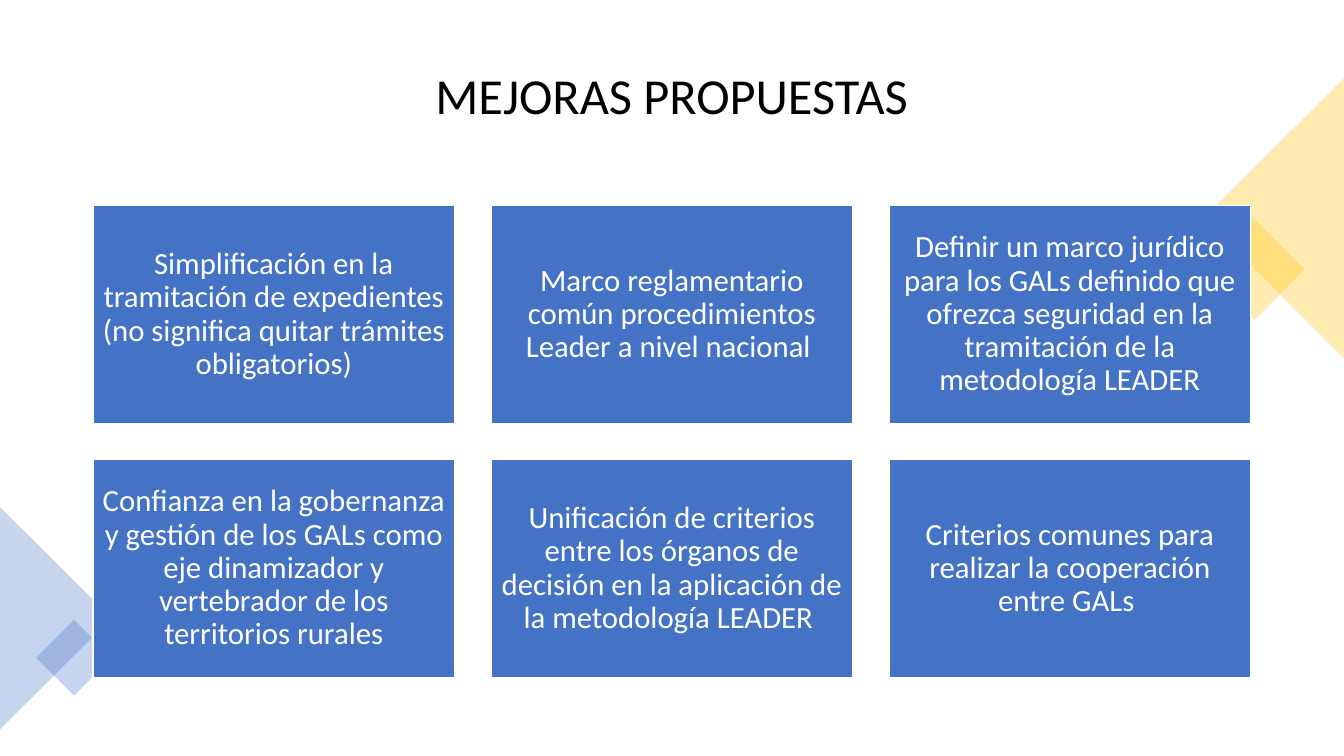
from pptx import Presentation
from pptx.dml.color import RGBColor
from pptx.enum.shapes import MSO_SHAPE as Preset
from pptx.enum.text import MSO_ANCHOR as Anchor, PP_ALIGN as Align
from pptx.oxml.ns import qn
from pptx.util import Cm, Pt
from lxml.etree import SubElement

BLUE, GOLD, WHITE, BLACK = "4472C4", "FFC000", "FFFFFF", "000000"

PROPOSALS = [
    "Simplificación en la tramitación de expedientes (no significa quitar trámites obligatorios)",
    "Marco reglamentario común procedimientos Leader a nivel nacional ",
    "Definir un marco jurídico para los GALs definido que ofrezca seguridad "
    "en la tramitación de la metodología LEADER",
    "Confianza en la gobernanza y gestión de los GALs como eje dinamizador "
    "y vertebrador de los territorios rurales",
    "Unificación de criterios entre los órganos de decisión en la aplicación "
    "de la metodología LEADER ",
    "Criterios comunes para realizar la cooperación entre GALs ",
]
COLUMNS = 3
GRID_LEFT, GRID_TOP = 2.34, 5.18
BOX_WIDTH, BOX_HEIGHT, GAP = 9.12, 5.49, 0.91

# preset, left, top, width, height, rotation, colour
ORNAMENTS = [
    (Preset.RECTANGLE, 30.71, 5.89, 1.8, 1.8, 45, GOLD),
    (Preset.ISOSCELES_TRIANGLE, 28.58, 3.73, 7.04, 3.53, 270, GOLD),
    (Preset.ISOSCELES_TRIANGLE, -1.4, 14.17, 5.61, 2.82, 90, BLUE),
    (Preset.RECTANGLE, 1.19, 15.9, 1.35, 1.35, 45, BLUE),
]


def rgb(code):
    return RGBColor.from_string(code)


class SlideBuilder:
    font = "Calibri"
    line_spacing = 0.9

    def __init__(self, slide):
        self.slide = slide

    def centre_text(self, shape, text, size, color, inset_x, inset_y):
        frame = shape.text_frame
        frame_format = {
            "word_wrap": True, "vertical_anchor": Anchor.MIDDLE,
            "margin_left": Cm(inset_x), "margin_right": Cm(inset_x),
            "margin_top": Cm(inset_y), "margin_bottom": Cm(inset_y),
        }
        for name, value in frame_format.items():
            setattr(frame, name, value)
        paragraph = frame.paragraphs[0]
        paragraph.alignment = Align.CENTER
        paragraph.line_spacing = self.line_spacing
        run = paragraph.add_run()
        run.text = text
        for name, value in {"name": self.font, "size": Pt(size)}.items():
            setattr(run.font, name, value)
        run.font.color.rgb = rgb(color)

    def solid(self, preset, left, top, width, height, color):
        """Add a preset shape with a plain fill and no shadow."""
        shape = self.slide.shapes.add_shape(preset, Cm(left), Cm(top), Cm(width), Cm(height))
        shape.shadow.inherit = False
        shape.fill.solid()
        shape.fill.fore_color.rgb = rgb(color)
        return shape

    def title(self, text, left, top, width, height):
        heading = self.slide.shapes.add_textbox(Cm(left), Cm(top), Cm(width), Cm(height))
        self.centre_text(heading, text, 36, BLACK, 0.25, 0.13)

    def ornament(self, preset, left, top, width, height, rotation, color, opacity=30):
        shape = self.solid(preset, left, top, width, height, color)
        shape.rotation = rotation
        shape.line.fill.background()
        tint = shape.element.spPr.find(qn("a:solidFill"))[0]
        SubElement(tint, qn("a:alpha"), val=str(opacity * 1000))

    def proposal(self, text, left, top):
        box = self.solid(Preset.RECTANGLE, left, top, BOX_WIDTH, BOX_HEIGHT, BLUE)
        box.line.color.rgb = rgb(WHITE)
        box.line.width = Pt(1)
        self.centre_text(box, text, 22, WHITE, 0.23, 0.23)


def main():
    deck = Presentation()
    deck.slide_width, deck.slide_height = Cm(33.87), Cm(19.05)
    builder = SlideBuilder(deck.slides.add_slide(deck.slide_layouts[6]))

    builder.title("MEJORAS PROPUESTAS", 1.78, 0.89, 30.3, 3.15)
    for ornament in ORNAMENTS:
        builder.ornament(*ornament)
    for index, text in enumerate(PROPOSALS):
        row, column = divmod(index, COLUMNS)
        builder.proposal(text, GRID_LEFT + column * (BOX_WIDTH + GAP),
                         GRID_TOP + row * (BOX_HEIGHT + GAP))
    deck.save("out.pptx")


if __name__ == "__main__":
    main()
